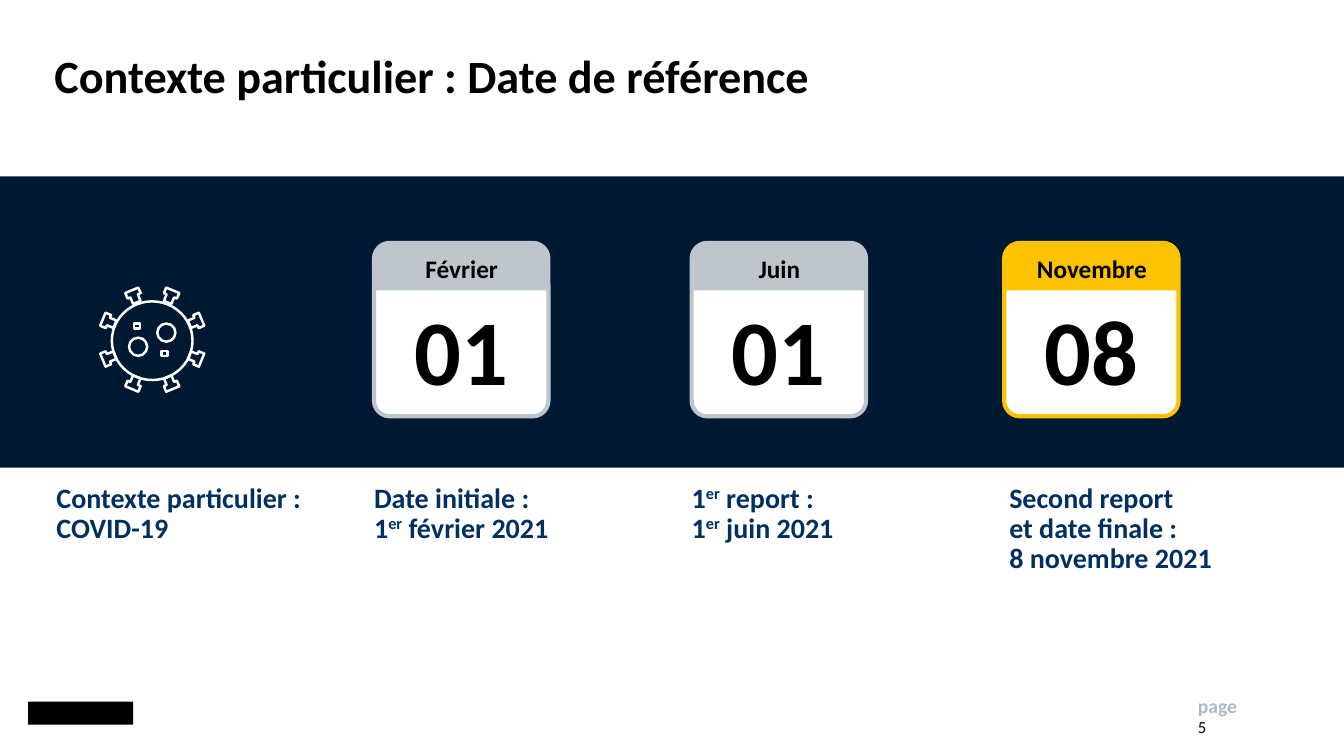
from math import cos, pi, sin

from pptx import Presentation
from pptx.dml.color import RGBColor
from pptx.enum.shapes import MSO_SHAPE
from pptx.enum.text import MSO_ANCHOR, MSO_AUTO_SIZE, PP_ALIGN
from pptx.util import Pt

PX = 9144  # EMU per px, 100 px to the inch
BLACK = RGBColor(0x00, 0x00, 0x00)
WHITE = RGBColor(0xFF, 0xFF, 0xFF)
NIGHT = RGBColor(0x00, 0x19, 0x32)
NAVY = RGBColor(0x00, 0x30, 0x60)
SILVER = RGBColor(0xBF, 0xC5, 0xCC)
MIST = RGBColor(0xAB, 0xBA, 0xC9)
YELLOW = RGBColor(0xFD, 0xC3, 0x00)

COLUMN_LEFT, COLUMN_STEP = 56, 315
CAPTIONS = [
    "Contexte particulier : COVID-19",
    "Date initiale :\n1^er^ février 2021",
    "1^er^ report :\n1^er^ juin 2021",
    "Second report\net date finale :\n8 novembre 2021",
]
CALENDARS = [
    (371, "Février", "01", SILVER),
    (686, "Juin", "01", SILVER),
    (996, "Novembre", "08", YELLOW),
]


def emu(*lengths):
    return [round(length * PX) for length in lengths]


def write(shape, text, *, size, color=BLACK, bold=True, align=PP_ALIGN.LEFT,
          anchor=MSO_ANCHOR.TOP, insets=(0, 0, 0, 0), line_spacing=1.0):
    """Fill a shape with one paragraph; ^...^ marks superscript, \\n a line break."""
    frame = shape.text_frame
    frame.word_wrap = True
    frame.auto_size = MSO_AUTO_SIZE.NONE
    frame.vertical_anchor = anchor
    (frame.margin_left, frame.margin_top,
     frame.margin_right, frame.margin_bottom) = emu(*insets)
    paragraph = frame.paragraphs[0]
    paragraph.alignment = align
    paragraph.line_spacing = line_spacing
    paragraph.space_before = Pt(0)
    for row, line in enumerate(text.split("\n")):
        if row:
            paragraph.add_line_break()
        for part, words in enumerate(line.split("^")):
            run = paragraph.add_run()
            run.text = words
            font = run.font
            font.name, font.size, font.bold = "Calibri", Pt(size), bold
            font.color.rgb = color
            if part % 2:
                run._r.get_or_add_rPr().set("baseline", "30000")
    return paragraph


def paint(shape, fill=None, line=None, width=1.75):
    shape.shadow.inherit = False
    if fill is None:
        shape.fill.background()
    else:
        shape.fill.solid()
        shape.fill.fore_color.rgb = fill
    if line is None:
        shape.line.fill.background()
    else:
        shape.line.color.rgb = line
        shape.line.width = Pt(width)
    return shape


def add_preset(slide, preset, box, **colors):
    return paint(slide.shapes.add_shape(preset, *emu(*box)), **colors)


def place(placeholder, box):
    (placeholder.left, placeholder.top,
     placeholder.width, placeholder.height) = emu(*box)
    return placeholder


def add_headings(slide):
    title, *captions = slide.placeholders
    write(place(title, (54, 17, 864, 122)), "Contexte particulier : Date de référence",
          size=33, anchor=MSO_ANCHOR.MIDDLE, line_spacing=0.9)
    for column, (caption, text) in enumerate(zip(captions, CAPTIONS)):
        place(caption, (COLUMN_LEFT + column * COLUMN_STEP, 480, 276, 216))
        paragraph = write(caption, text, size=20, color=NAVY, line_spacing=0.9)
        properties = paragraph._p.get_or_add_pPr()
        properties.set("marL", "0")
        properties.set("indent", "0")
        bullet_none = properties.makeelement(
            "{http://schemas.openxmlformats.org/drawingml/2006/main}buNone", {})
        properties.append(bullet_none)


def add_calendar(slide, left, top, month, day, color):
    leaf = add_preset(slide, MSO_SHAPE.ROUNDED_RECTANGLE, (left, top, 173, 172),
                      fill=WHITE, line=color, width=3)
    leaf.adjustments[0] = 0.09
    write(leaf, day, size=66, align=PP_ALIGN.CENTER, anchor=MSO_ANCHOR.BOTTOM,
          insets=(7, 3, 7, 8))
    header = add_preset(slide, MSO_SHAPE.ROUND_2_SAME_RECTANGLE,
                        (left + 2, top, 170, 47), fill=color)
    header.adjustments[0] = 0.32
    write(header, month, size=18, align=PP_ALIGN.CENTER, anchor=MSO_ANCHOR.MIDDLE)


def add_virus(slide, left, top):
    """Draw the outlined virus in a box of 102 by 102 px."""
    center_x, center_y = left + 51, top + 51
    spike = [(40, -4), (47, -4), (47, -7), (53, -7),
             (53, 7), (47, 7), (47, 4), (40, 4)]
    for turn in range(8):
        angle = pi / 8 + turn * pi / 4
        points = [emu(center_x + out * cos(angle) - side * sin(angle),
                      center_y + out * sin(angle) + side * cos(angle))
                  for out, side in spike]
        builder = slide.shapes.build_freeform(*points[0])
        builder.add_line_segments(points[1:], close=True)
        paint(builder.convert_to_shape(), line=WHITE)
    for preset, x, y, width, height in [
        (MSO_SHAPE.OVAL, 11, 13, 80, 78),
        (MSO_SHAPE.OVAL, 28, 49, 18, 18),
        (MSO_SHAPE.OVAL, 56, 35, 18, 18),
        (MSO_SHAPE.RECTANGLE, 33, 35, 6, 5),
        (MSO_SHAPE.RECTANGLE, 60, 62, 6, 5),
    ]:
        add_preset(slide, preset, (left + x, top + y, width, height), line=WHITE)


def add_band(slide, top):
    add_preset(slide, MSO_SHAPE.RECTANGLE, (0, top, 1333, 289), fill=NIGHT)
    add_virus(slide, 100, top + 111)
    for left, month, day, color in CALENDARS:
        add_calendar(slide, left, top + 66, month, day, color)


def add_footer(slide, left, top):
    add_preset(slide, MSO_SHAPE.RECTANGLE, (28, top + 8, 104, 23), fill=BLACK)
    label = slide.shapes.add_textbox(*emu(left, top, 59, 20))
    write(label, "page", size=14, color=MIST)
    number = slide.shapes.add_textbox(*emu(left, top + 23, 67, 28))
    write(number, "5", size=12, bold=False)


def main():
    deck = Presentation()
    deck.slide_width, deck.slide_height = emu(1333, 750)
    slide = deck.slides.add_slide(deck.slide_layouts.get_by_name("Comparison"))
    add_headings(slide)
    add_band(slide, 175)
    add_footer(slide, 1188, 688)
    deck.save("out.pptx")


if __name__ == "__main__":
    main()
